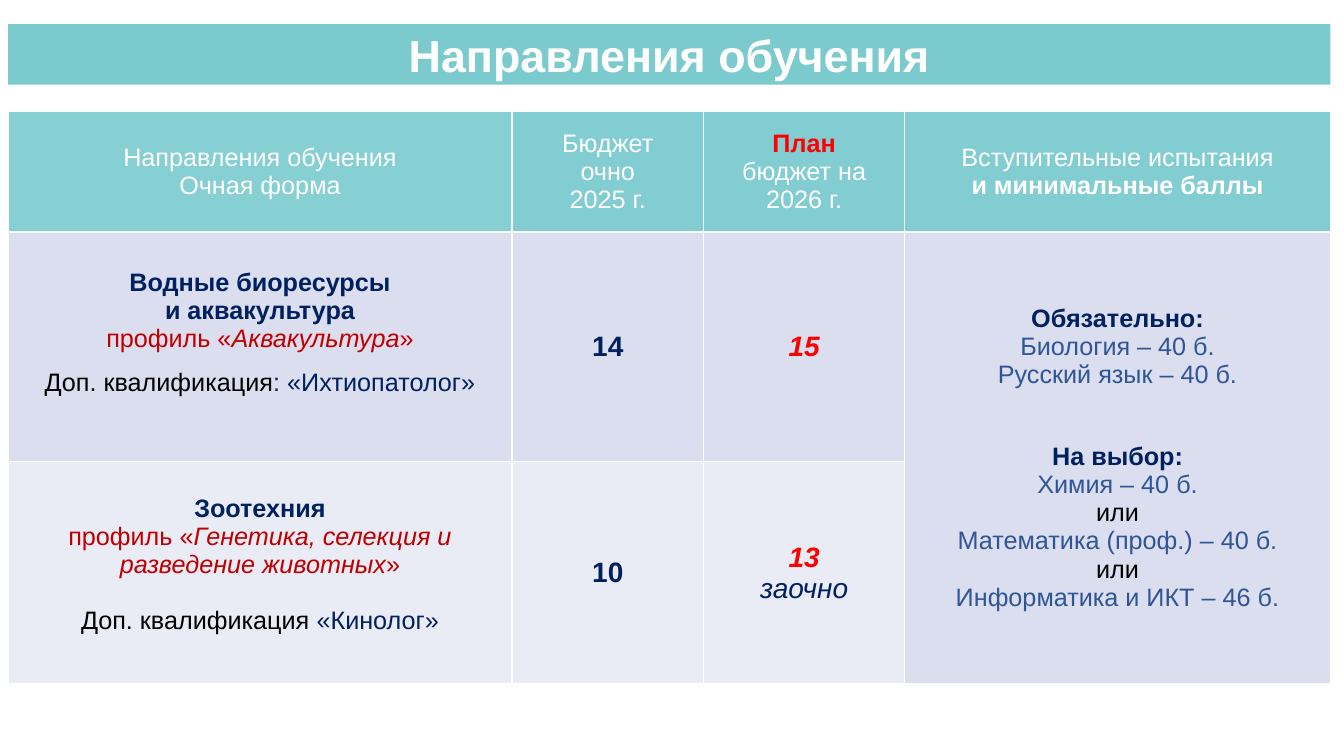
from lxml.etree import SubElement
from pptx import Presentation
from pptx.dml.color import RGBColor
from pptx.enum.shapes import MSO_SHAPE
from pptx.enum.text import MSO_ANCHOR as ANCHOR, PP_ALIGN as ALIGN
from pptx.oxml import parse_xml
from pptx.oxml.ns import nsdecls, qn
from pptx.util import Inches, Pt

W, H = Inches(13.33), Inches(7.5)
FONT = "Arial"
COLORS = {
    "teal": "4EB9BE", "lilac": "CFD5EA", "pale": "E9EBF5", "white": "FFFFFF",
    "navy": "002060", "blue": "2F5597", "wine": "C00000", "red": "FF0000",
    "black": "000000",
}
STYLES = {
    "title": ("white", 32, True, False),
    "head": ("white", 18, False, False),
    "head_bold": ("white", 18, True, False),
    "plan": ("red", 18, True, False),
    "name": ("navy", 18, True, False),
    "profile": ("wine", 18, False, False),
    "profile_name": ("wine", 18, False, True),
    "label": ("black", 18, False, False),
    "qualification": ("navy", 18, False, False),
    "exam": ("blue", 18, False, False),
    "seats": ("navy", 20, True, False),
    "seats_plan": ("red", 20, True, True),
    "mode": ("navy", 20, False, True),
}
COLUMNS = (38.1, 14.5, 15.2, 32.2)
ROWS = (21.1, 40.1, 38.8)

HEADER = [
    [[("Направления обучения", "head")], [("Очная форма", "head")]],
    [[("Бюджет", "head")], [("очно", "head")], [("2025 г.", "head")]],
    [[("План", "plan")], [("бюджет на", "head")], [("2026 г.", "head")]],
    [[("Вступительные испытания", "head")], [("и минимальные баллы", "head_bold")]],
]
AQUACULTURE = [
    [("Водные биоресурсы", "name")],
    [("и аквакультура", "name")],
    [("профиль «", "profile"), ("Аквакультура", "profile_name"), ("»", "profile")],
    [("Доп. квалификация", "label"), (": «Ихтиопатолог»", "qualification")],
]
ZOOTECHNICS = [
    [("Зоотехния", "name")],
    [("профиль «", "profile"),
     ("Генетика, селекция и разведение животных", "profile_name"), ("»", "profile")],
    [("Доп. квалификация ", "label"), ("«Кинолог»", "qualification")],
]
EXAMS = [
    [("Обязательно:", "name")],
    [("Биология – 40 б.", "exam")],
    [("Русский язык – 40 б.", "exam")],
    [("На выбор:", "name")],
    [("Химия – 40 б.", "exam")],
    [("или", "label")],
    [("Математика (проф.) – 40 б.", "exam")],
    [("или", "label")],
    [("Информатика и ИКТ – 46 б.", "exam")],
]


def area(left, top, width, height):
    return [int(v * side / 100) for v, side in
            ((left, W), (top, H), (width, W), (height, H))]


def rgb(name):
    return RGBColor.from_string(COLORS[name])


def paint(fill, element, color, opacity):
    fill.solid()
    fill.fore_color.rgb = rgb(color)
    clr = element.find(".//" + qn("a:srgbClr"))
    SubElement(clr, qn("a:alpha")).set("val", str(opacity * 1000))


def write(tf, lines, gaps=None):
    for i, line in enumerate(lines):
        p = tf.paragraphs[0] if i == 0 else tf.add_paragraph()
        p.alignment = ALIGN.CENTER
        p.space_before = Pt((gaps or {}).get(i, 0))
        for text, style in line:
            r = p.add_run()
            r.text = text
            color, size, bold, italic = STYLES[style]
            f = r.font
            f.name, f.size, f.bold, f.italic = FONT, Pt(size), bold, italic
            f.color.rgb = rgb(color)


def fill_cell(cell, lines, color, opacity, gaps=None, bottom=0.05):
    cell.vertical_anchor = ANCHOR.MIDDLE
    cell.margin_bottom = Inches(bottom)
    tcPr = cell._tc.get_or_add_tcPr()
    paint(cell.fill, tcPr, color, opacity)
    for i, side in enumerate("LRTB"):
        tcPr.insert(i, parse_xml(
            f'<a:ln{side} {nsdecls("a")} w="{Pt(1)}"><a:solidFill>'
            f'<a:srgbClr val="{COLORS["white"]}"/></a:solidFill></a:ln{side}>'))
    write(cell.text_frame, lines, gaps)


def add_title(s, box):
    left, top, width, height = box
    band = s.shapes.add_shape(MSO_SHAPE.RECTANGLE, *box)
    band.shadow.inherit = False
    paint(band.fill, band.element, "teal", 75)
    band.line.fill.background()
    sp = s.shapes.title
    inset = int(width * 0.055)
    sp.left, sp.top, sp.width, sp.height = left + inset, top, width - 2 * inset, height
    tf = sp.text_frame
    tf.word_wrap = True
    tf.margin_top = tf.margin_bottom = 0
    tf.vertical_anchor = ANCHOR.MIDDLE
    write(tf, [[("Направления обучения", "title")]])
    s.shapes.element.append(sp.element)


def add_programmes(s, box):
    left, top, width, height = box
    table = s.shapes.add_table(len(ROWS), len(COLUMNS), *box).table
    table.first_row = table.horz_banding = False
    for column, share in zip(table.columns, COLUMNS):
        column.width = int(width * share / 100)
    for row, share in zip(table.rows, ROWS):
        row.height = int(height * share / 100)
    table.cell(1, 3).merge(table.cell(2, 3))

    for c, lines in enumerate(HEADER):
        fill_cell(table.cell(0, c), lines, "teal", 70 if c else 68)
    fill_cell(table.cell(1, 0), AQUACULTURE, "lilac", 77, {3: 11.5}, 0.33)
    fill_cell(table.cell(1, 1), [[("14", "seats")]], "lilac", 77)
    fill_cell(table.cell(1, 2), [[("15", "seats_plan")]], "lilac", 77)
    fill_cell(table.cell(1, 3), EXAMS, "lilac", 77, {3: 38})
    fill_cell(table.cell(2, 0), ZOOTECHNICS, "pale", 100, {2: 20}, 0.21)
    fill_cell(table.cell(2, 1), [[("10", "seats")]], "pale", 100)
    fill_cell(table.cell(2, 2), [[("13", "seats_plan")], [("заочно", "mode")]],
              "pale", 100)


def main():
    prs = Presentation()
    prs.slide_width, prs.slide_height = W, H
    s = prs.slides.add_slide(prs.slide_layouts[5])
    add_title(s, area(0.6, 3.2, 98.4, 8))
    add_programmes(s, area(0.6, 14.7, 98.4, 75.8))
    prs.save("out.pptx")


if __name__ == "__main__":
    main()
